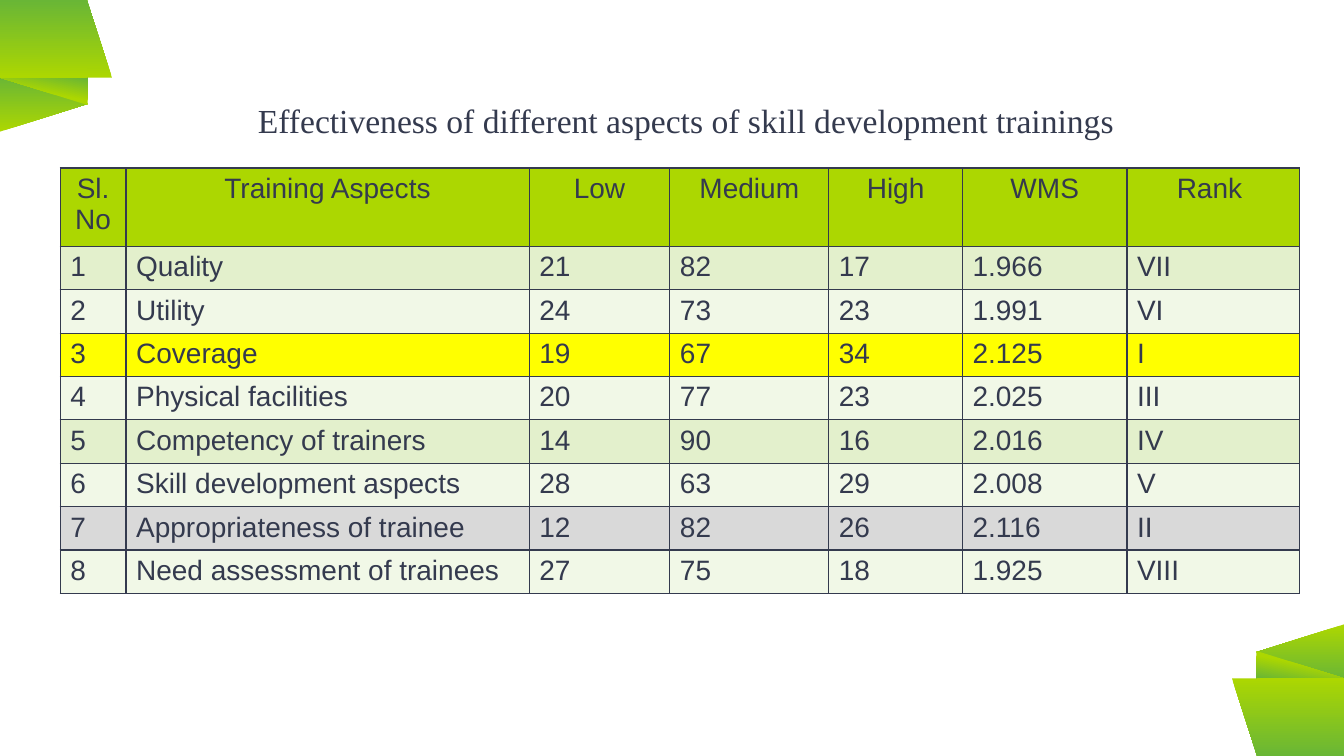
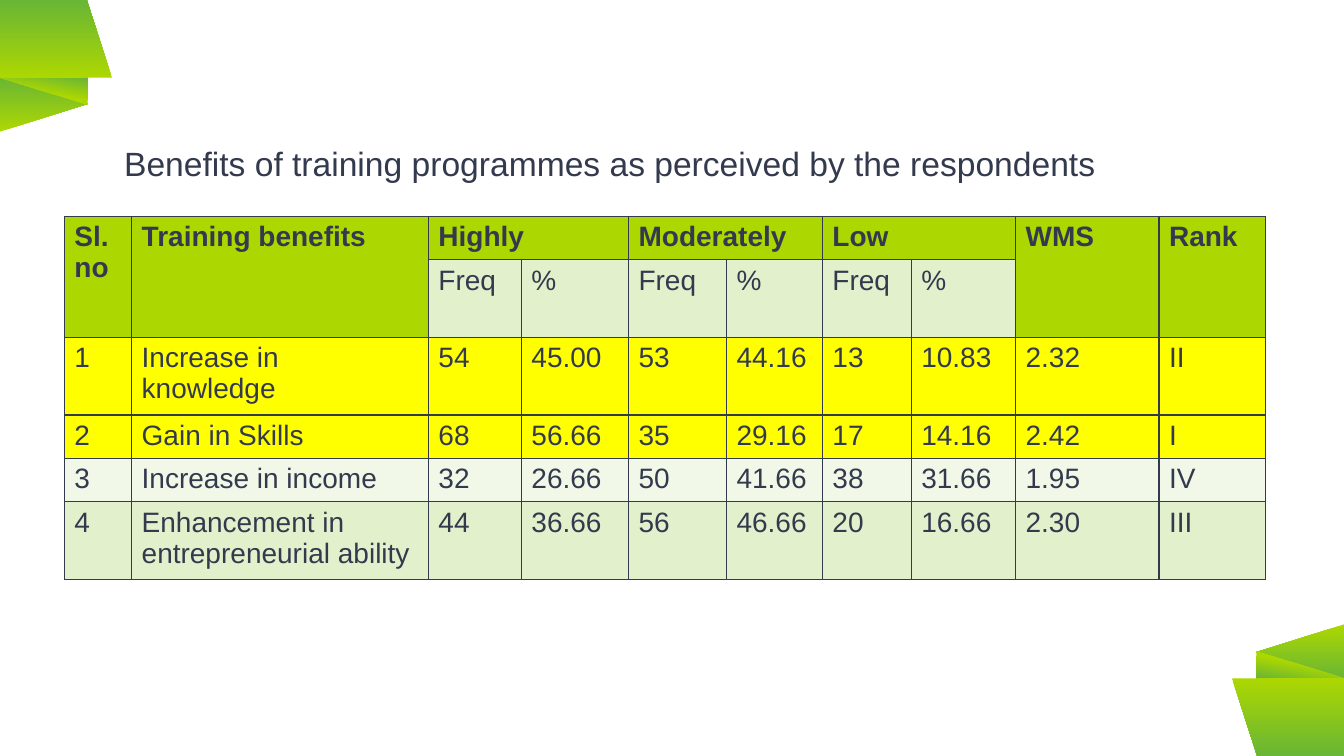
from copy import deepcopy

from pptx import Presentation
from pptx.dml.color import RGBColor
from pptx.enum.shapes import MSO_SHAPE
from pptx.enum.text import MSO_ANCHOR, MSO_AUTO_SIZE, PP_ALIGN
from pptx.oxml import parse_xml
from pptx.oxml.ns import nsdecls
from pptx.util import Pt

PX = 6350  # EMU; the slide is 1920 x 1080 px
WIDTH, HEIGHT = 1920, 1080
TITLE_ONLY = 5

COLORS = {
    "text": "343A4E",
    "lime": "ACD701",
    "green": "69B636",
    "band_dark": "E3F0CC",
    "band_light": "F1F8E7",
    "yellow": "FFFF00",
    "grey": "D9D9D9",
}

# preset, box, rotation, gradient angle, of the ribbon in the top left corner
RIBBON = [
    (MSO_SHAPE.ISOSCELES_TRIANGLE, (23, 86, 79, 125), 90, 180),
    (MSO_SHAPE.RIGHT_TRIANGLE, (0, 111, 125, 39), 180, 260),
    (MSO_SHAPE.RECTANGLE, (0, 0, 125, 111), 0, 90),
    (MSO_SHAPE.ISOSCELES_TRIANGLE, (124, 0, 36, 111), 0, 90),
]

ASPECTS = [
    ["Sl.No", "Training Aspects", "Low", "Medium", "High", "WMS", "Rank "],
    ["1", "Quality", "21", "82", "17", "1.966", "VII"],
    ["2", "Utility", "24", "73", "23", "1.991", "VI"],
    ["3", "Coverage", "19", "67", "34", "2.125", "I"],
    ["4", "Physical facilities", "20", "77", "23", "2.025", "III"],
    ["5", "Competency of trainers", "14", "90", "16", "2.016", "IV"],
    ["6", "Skill development aspects", "28", "63", "29", "2.008", "V"],
    ["7", "Appropriateness of trainee", "12", "82", "26", "2.116", "II"],
    ["8", "Need assessment of trainees", "27", "75", "18", "1.925", "VIII"],
]

BENEFITS = [
    ["Sl.no", "Training benefits", "Highly", None, "Moderately", None,
     "Low", None, "WMS", "Rank"],
    [None, None, *["Freq", "%"] * 3, None, None],
    ["1", "Increase in knowledge", "54", "45.00", "53", "44.16",
     "13", "10.83", "2.32", "II"],
    ["2", "Gain in Skills", "68", "56.66", "35", "29.16",
     "17", "14.16", "2.42", "I"],
    ["3", "Increase in income", "32", "26.66", "50", "41.66",
     "38", "31.66", "1.95", "IV"],
    ["4", "Enhancement in entrepreneurial ability", "44", "36.66", "56", "46.66",
     "20", "16.66", "2.30", "III"],
]


def px(*lengths):
    return [n * PX for n in lengths]


def rgb(name):
    return RGBColor.from_string(COLORS[name])


def write(tf, text, size=20, font="Arial", bold=False, align=PP_ALIGN.LEFT):
    p = tf.paragraphs[0]
    p.alignment = align
    r = p.add_run()
    r.text = text
    r.font.size = Pt(size)
    r.font.name = font
    r.font.bold = bold
    r.font.color.rgb = rgb("text")


def add_ribbon_part(slide, preset, box, rotation, angle):
    s = slide.shapes.add_shape(preset, *px(*box))
    s.rotation = rotation
    s.shadow.inherit = False
    s.line.fill.background()
    s.fill.gradient()
    s.fill.gradient_angle = angle
    for stop, color in zip(s.fill.gradient_stops, ("lime", "green")):
        stop.color.rgb = rgb(color)
    if preset == MSO_SHAPE.RIGHT_TRIANGLE:
        first = s.element.spPr.xpath(".//a:gs")[0]
        middle = deepcopy(first)
        middle.set("pos", "47000")
        first.addnext(middle)
    return s


def add_ribbons(slide):
    """Put a ribbon in two opposite corners of the slide's layout."""
    tree = slide.slide_layout.shapes.element
    parts = []
    for turn in (180, 0):
        for preset, (x, y, w, h), rotation, angle in RIBBON:
            if turn:
                x, y = WIDTH - x - w, HEIGHT - y - h
            s = add_ribbon_part(slide, preset, (x, y, w, h),
                                (rotation + turn) % 360, angle)
            parts.append(s)
        s.adjustments[0] = 1
        s.element.spPr.xfrm.set("flipH", "1")
    for number, s in enumerate(parts, 100):
        s.element.nvSpPr.cNvPr.set("id", str(number))
        tree.append(s.element)


def set_title(slide, text, box, font):
    s = slide.shapes.title
    s.left, s.top, s.width, s.height = px(*box)
    tf = s.text_frame
    tf.word_wrap = True
    tf.auto_size = MSO_AUTO_SIZE.NONE
    tf.vertical_anchor = MSO_ANCHOR.TOP
    write(tf, text, size=24, font=font)


def set_borders(cell):
    tc_pr = cell._tc.get_or_add_tcPr()
    for i, side in enumerate("LRTB"):
        tc_pr.insert(i, parse_xml(
            f'<a:ln{side} {nsdecls("a")} w="12700"><a:solidFill>'
            f'<a:srgbClr val="{COLORS["text"]}"/></a:solidFill></a:ln{side}>'))


def row_color(row, highlights):
    if row == 0:
        return "lime"
    return highlights.get(row, "band_dark" if row % 2 else "band_light")


def add_table(slide, rows, left, top, widths, heights, highlights,
              merges=(), **header_format):
    """Merges are pairs of (row, column) corners."""
    frame = slide.shapes.add_table(
        len(rows), len(widths), *px(left, top, sum(widths), sum(heights)))
    table = frame.table
    table.horz_banding = table.first_row = False
    for column, width in zip(table.columns, widths):
        column.width = width * PX
    for i, (row, height) in enumerate(zip(rows, heights)):
        table.rows[i].height = height * PX
        for j, text in enumerate(row):
            cell = table.cell(i, j)
            cell.fill.solid()
            cell.fill.fore_color.rgb = rgb(row_color(i, highlights))
            set_borders(cell)
            if text:
                write(cell.text_frame, text, **(header_format if i == 0 else {}))
    for start, end in merges:
        table.cell(*start).merge(table.cell(*end))


def main():
    prs = Presentation()
    prs.slide_width, prs.slide_height = px(WIDTH, HEIGHT)
    layout = prs.slide_layouts[TITLE_ONLY]

    aspects = prs.slides.add_slide(layout)
    add_ribbons(aspects)
    set_title(aspects,
              "Effectiveness of different aspects of skill development trainings",
              (354, 136, 1274, 72), "Times New Roman")
    add_table(aspects, ASPECTS, 86, 240,
              widths=[94, 576, 201, 227, 191, 235, 247],
              heights=[112] + [62] * 8,
              highlights={3: "yellow", 7: "grey"},
              align=PP_ALIGN.CENTER)

    benefits = prs.slides.add_slide(layout)
    set_title(benefits,
              "Benefits of training programmes as perceived by the respondents",
              (163, 197, 1444, 72), "Arial")
    add_table(benefits, BENEFITS, 92, 309,
              widths=[96, 424, 133, 153, 140, 137, 127, 149, 205, 152],
              heights=[62, 111, 111, 62, 62, 111],
              highlights={2: "yellow", 3: "yellow"},
              merges=[((0, j), (1, j)) for j in (0, 1, 8, 9)]
              + [((0, j), (0, j + 1)) for j in (2, 4, 6)],
              bold=True)

    prs.save("out.pptx")


if __name__ == "__main__":
    main()
